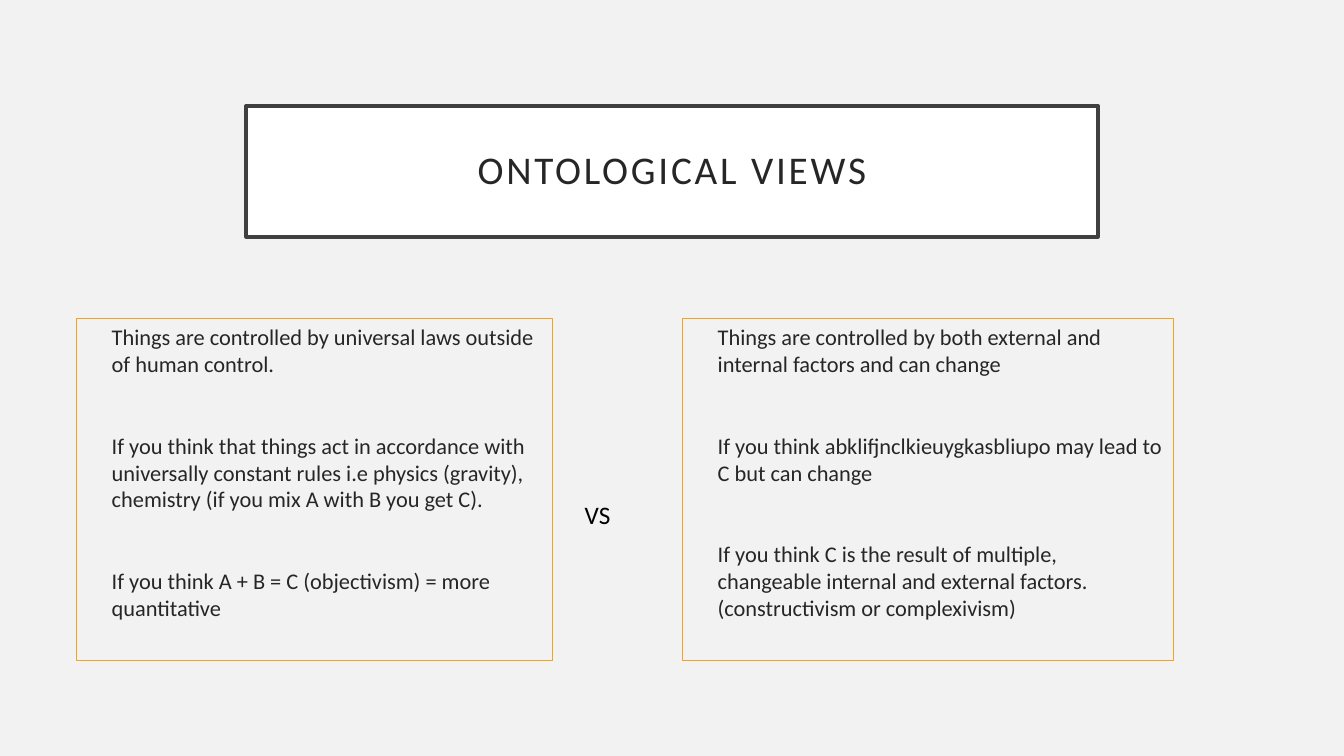
import dataclasses

import pptx
import pptx.dml.color
import pptx.enum.shapes
import pptx.enum.text
import pptx.util

Inches = pptx.util.Inches
Pt = pptx.util.Pt
Align = pptx.enum.text.PP_ALIGN
Anchor = pptx.enum.text.MSO_ANCHOR

DARK = "262626"
ORANGE = "F6A21D"


@dataclasses.dataclass
class Panel:
    """A rectangle with text; lengths in inches, sizes in points."""
    left: float
    top: float
    width: float
    height: float
    paragraphs: list[str]
    line: str = ORANGE
    line_width: float = 0.75
    fill: str | None = None
    size: int = 16
    color: str = DARK
    indent: float = 0.25
    gap: float = 39
    spacing: float = 1.0
    tracking: int = 0
    align: Align = Align.LEFT
    anchor: Anchor = Anchor.TOP
    inset: tuple[float, float] = (0.1, 0.05)


def rgb(value: str) -> pptx.dml.color.RGBColor:
    return pptx.dml.color.RGBColor.from_string(value)


def apply(target: object, values: dict[str, object]) -> None:
    for name, value in values.items():
        setattr(target, name, value)


def write_text(shape, panel: Panel) -> None:
    frame = shape.text_frame
    side, edge = map(Inches, panel.inset)
    apply(frame, {
        "word_wrap": True, "vertical_anchor": panel.anchor,
        "margin_left": side, "margin_right": side,
        "margin_top": edge, "margin_bottom": edge,
    })
    for index, text in enumerate(panel.paragraphs):
        para = frame.add_paragraph() if index else frame.paragraphs[0]
        para._p.get_or_add_pPr().set("marL", str(Inches(panel.indent)))
        apply(para, {
            "alignment": panel.align, "line_spacing": panel.spacing,
            "space_before": Pt(panel.gap if index else 0),
        })
        span = para.add_run()
        span.text = text
        apply(span.font, {"name": "Calibri", "size": Pt(panel.size)})
        span.font.color.rgb = rgb(panel.color)
        if panel.tracking:
            span.font._element.set("spc", str(panel.tracking * 100))


def draw_panel(page, panel: Panel) -> None:
    shape = page.shapes.add_shape(
        pptx.enum.shapes.MSO_SHAPE.RECTANGLE,
        *map(Inches, (panel.left, panel.top, panel.width, panel.height)))
    shape.shadow.inherit = False
    if panel.fill:
        shape.fill.solid()
        shape.fill.fore_color.rgb = rgb(panel.fill)
    else:
        shape.fill.background()
    shape.line.color.rgb = rgb(panel.line)
    shape.line.width = Pt(panel.line_width)
    write_text(shape, panel)


PANELS = [
    # Title
    Panel(2.44, 1.05, 8.45, 1.3, ["ONTOLOGICAL VIEWS"],
          line="404040", line_width=2.5, fill="FFFFFF", size=28, indent=0,
          spacing=0.9, tracking=2, align=Align.CENTER,
          anchor=Anchor.MIDDLE, inset=(0.2, 0.2)),
    # Objectivist view
    Panel(0.76, 3.16, 4.72, 3.39, [
        "Things are controlled by universal laws outside of human control.",
        "If you think that things act in accordance with universally constant "
        "rules i.e physics (gravity), chemistry (if you mix A with B you get C).",
        "If you think A + B = C (objectivism) = more quantitative",
    ]),
    # Constructivist view
    Panel(6.77, 3.16, 4.87, 3.39, [
        "Things are controlled by both external and internal factors and can change",
        "If you think abklifjnclkieuygkasbliupo may lead to C but can change",
        "If you think C is the result of multiple, changeable internal and "
        "external factors. (constructivism or complexivism)",
    ]),
]
VERSUS = Panel(5.7, 4.9, 0.71, 0.4, ["VS"], size=18, color="000000", indent=0)


def main() -> None:
    deck = pptx.Presentation()
    apply(deck, {"slide_width": Inches(13.33), "slide_height": Inches(7.5)})
    page = deck.slides.add_slide(deck.slide_layouts[6])
    page.background.fill.solid()
    page.background.fill.fore_color.rgb = rgb("F2F2F2")

    for panel in PANELS:
        draw_panel(page, panel)

    # Label between the two views
    box = page.shapes.add_textbox(*map(
        Inches, (VERSUS.left, VERSUS.top, VERSUS.width, VERSUS.height)))
    write_text(box, VERSUS)

    deck.save("out.pptx")


if __name__ == "__main__":
    main()
